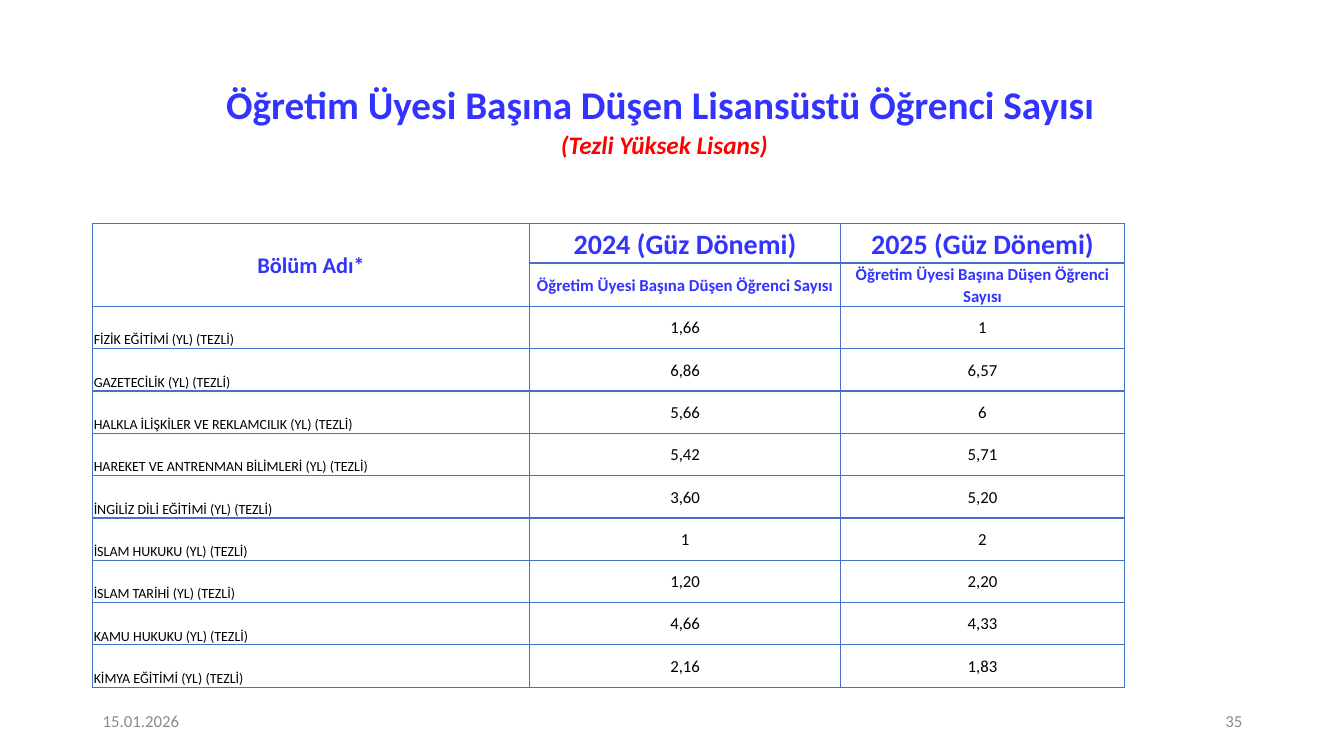
from dataclasses import dataclass

from lxml import etree
from pptx import Presentation
from pptx.dml.color import RGBColor
from pptx.enum.text import MSO_ANCHOR, MSO_AUTO_SIZE, PP_ALIGN
from pptx.oxml.ns import qn
from pptx.util import Inches, Pt

LEFT, CENTER, RIGHT = PP_ALIGN.LEFT, PP_ALIGN.CENTER, PP_ALIGN.RIGHT
MIDDLE, BOTTOM = MSO_ANCHOR.MIDDLE, MSO_ANCHOR.BOTTOM
NO_AUTOFIT = MSO_AUTO_SIZE.NONE
TITLE_ONLY = 5


@dataclass(frozen=True)
class Theme:
    """Colours, font and type sizes of the slide."""
    font: str = "Calibri"
    heading: str = "3333FF"
    subtitle: str = "FF0000"
    body: str = "000000"
    muted: str = "8C8C8C"
    border: str = "4472C4"
    title_size: int = 28
    subtitle_size: int = 18
    term_size: int = 20
    department_size: int = 16
    value_size: int = 12
    program_size: int = 10


THEME = Theme()
TERMS = ("2024 (Güz Dönemi)", "2025 (Güz Dönemi)")
MEASURE = "Öğretim Üyesi Başına Düşen Öğrenci Sayısı"
PROGRAMS = (
    ("FİZİK EĞİTİMİ", "1,66", "1"),
    ("GAZETECİLİK", "6,86", "6,57"),
    ("HALKLA İLİŞKİLER VE REKLAMCILIK", "5,66", "6"),
    ("HAREKET VE ANTRENMAN BİLİMLERİ", "5,42", "5,71"),
    ("İNGİLİZ DİLİ EĞİTİMİ", "3,60", "5,20"),
    ("İSLAM HUKUKU", "1", "2"),
    ("İSLAM TARİHİ", "1,20", "2,20"),
    ("KAMU HUKUKU", "4,66", "4,33"),
    ("KİMYA EĞİTİMİ", "2,16", "1,83"),
)
COLUMN_WIDTHS = (4.33, 3.09, 2.81)
HEADER_HEIGHTS = (0.39, 0.43)
PROGRAM_HEIGHT = 0.42


def write(paragraph, text, *, size, color, bold=False, italic=False, align=LEFT, spaced=False):
    """Append a formatted run to a paragraph and set the paragraph's format."""
    paragraph.alignment = align
    if spaced:
        paragraph.line_spacing = 1.07
        paragraph.space_after = Pt(8)
    run = paragraph.add_run()
    run.text = text
    run.font.name = THEME.font
    run.font.size = Pt(size)
    run.font.bold = bold
    run.font.italic = italic
    run.font.color.rgb = RGBColor.from_string(color)


def add_title(slide):
    """Place the title with its subtitle on a second line."""
    title = slide.shapes.title
    title.left, title.top = Inches(0.39), Inches(0.71)
    title.width, title.height = Inches(12.4), Inches(0.92)
    frame = title.text_frame
    frame.auto_size = NO_AUTOFIT
    frame.vertical_anchor = MIDDLE
    heading = frame.paragraphs[0]
    shared = dict(bold=True, align=CENTER, spaced=True)
    write(heading, "Öğretim Üyesi Başına Düşen Lisansüstü Öğrenci Sayısı ",
          size=THEME.title_size, color=THEME.heading, **shared)
    heading.add_line_break()
    write(heading, "(Tezli Yüksek Lisans)", size=THEME.subtitle_size,
          color=THEME.subtitle, italic=True, **shared)


def add_footer(slide, text, left, align):
    """Add one small text at the foot of the slide."""
    box = slide.shapes.add_textbox(Inches(left), Inches(6.95), Inches(3), Inches(0.4))
    frame = box.text_frame
    frame.word_wrap = True
    frame.vertical_anchor = MIDDLE
    write(frame.paragraphs[0], text, size=THEME.value_size, color=THEME.muted, align=align)


def style_cell(cell, margin, anchor):
    """Clear a cell's fill, set its margins and draw its four borders."""
    cell.fill.background()
    cell.vertical_anchor = anchor
    cell.margin_left = cell.margin_right = cell.margin_top = Inches(margin)
    cell.margin_bottom = 0
    properties = cell._tc.get_or_add_tcPr()
    for position, side in enumerate(("a:lnL", "a:lnR", "a:lnT", "a:lnB")):
        line = etree.Element(qn(side), w=str(Pt(1)))
        fill = etree.SubElement(line, qn("a:solidFill"))
        etree.SubElement(fill, qn("a:srgbClr"), val=THEME.border)
        properties.insert(position, line)


def fill_header(table):
    """Write the two header rows, with the department heading across both."""
    for row in range(len(HEADER_HEIGHTS)):
        for column in range(len(COLUMN_WIDTHS)):
            style_cell(table.cell(row, column), 0, MIDDLE)
    table.cell(0, 0).merge(table.cell(1, 0))
    labels = [(0, 0, "Bölüm Adı*", THEME.department_size)]
    for column, term in enumerate(TERMS, 1):
        labels += [(0, column, term, THEME.term_size), (1, column, MEASURE, THEME.value_size)]
    for row, column, label, size in labels:
        write(table.cell(row, column).text_frame.paragraphs[0], label, size=size,
              color=THEME.heading, bold=True, align=CENTER, spaced=True)


def fill_programs(table):
    """Write one row for each program."""
    for row, (program, *ratios) in enumerate(PROGRAMS, len(HEADER_HEIGHTS)):
        for column, text in enumerate((f"{program} (YL) (TEZLİ)", *ratios)):
            cell = table.cell(row, column)
            is_name = column == 0
            style_cell(cell, 0.01, BOTTOM if is_name else MIDDLE)
            write(cell.text_frame.paragraphs[0], text, color=THEME.body,
                  size=THEME.program_size if is_name else THEME.value_size,
                  align=LEFT if is_name else CENTER)


def add_ratio_table(slide):
    """Add the table of students per faculty member."""
    heights = HEADER_HEIGHTS + (PROGRAM_HEIGHT,) * len(PROGRAMS)
    table = slide.shapes.add_table(
        len(heights), len(COLUMN_WIDTHS), Inches(0.92), Inches(2.22),
        Inches(sum(COLUMN_WIDTHS)), Inches(sum(heights))).table
    table.first_row = table.horz_banding = False
    for column, width in zip(table.columns, COLUMN_WIDTHS):
        column.width = Inches(width)
    for row, height in zip(table.rows, heights):
        row.height = Inches(height)
    fill_header(table)
    fill_programs(table)


def main():
    """Build and save the slide."""
    deck = Presentation()
    deck.slide_width, deck.slide_height = Inches(13.33), Inches(7.5)
    slide = deck.slides.add_slide(deck.slide_layouts[TITLE_ONLY])
    add_title(slide)
    add_footer(slide, "15.01.2026", 0.92, LEFT)
    add_footer(slide, "35", 9.42, RIGHT)
    add_ratio_table(slide)
    deck.save("out.pptx")


if __name__ == "__main__":
    main()
